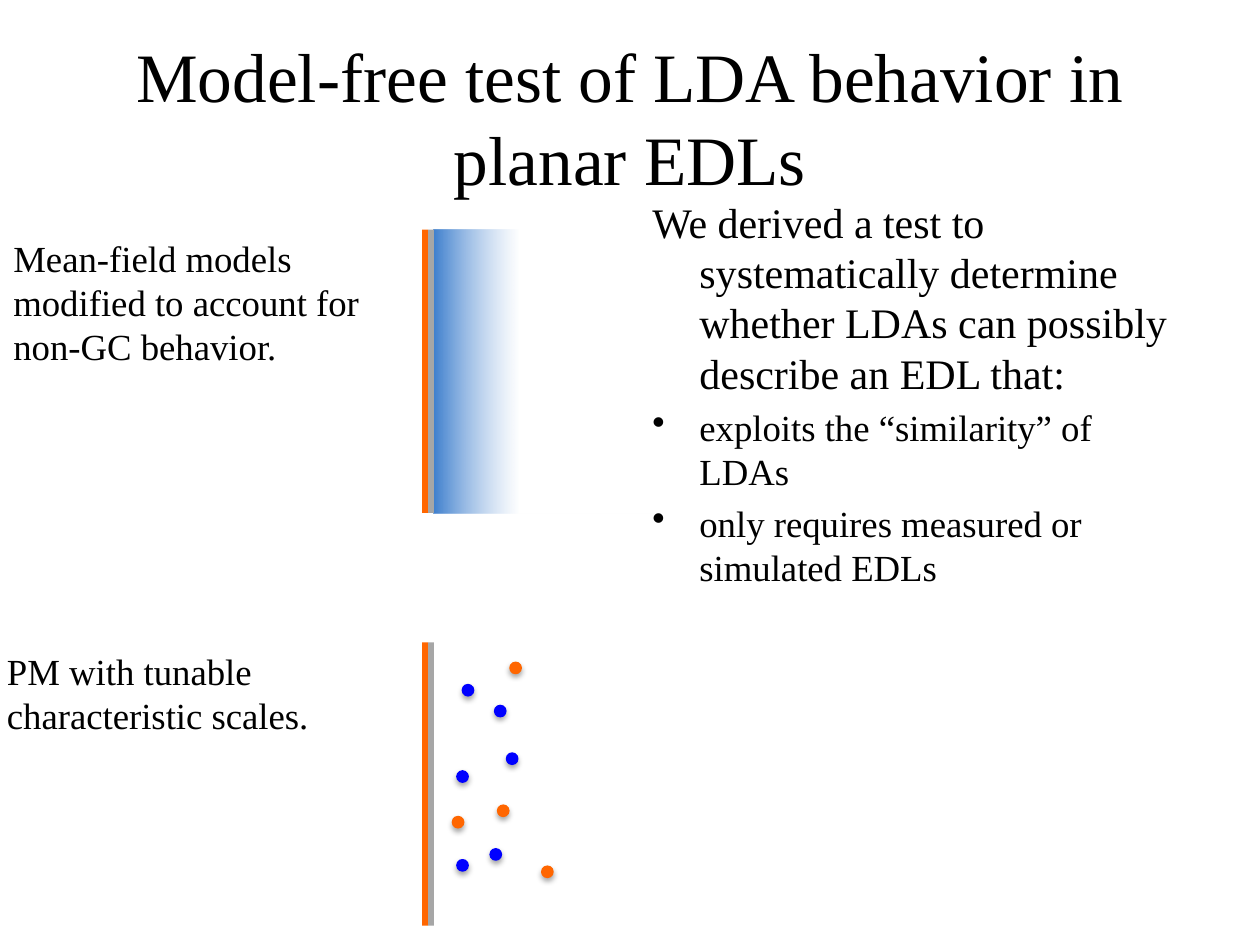
import pptx
import pptx.dml.color
import pptx.enum.shapes
import pptx.enum.text
import pptx.oxml
import pptx.oxml.ns
import pptx.util
from lxml import etree

Cm = pptx.util.Cm
Pt = pptx.util.Pt
RGBColor = pptx.dml.color.RGBColor
ShapeType = pptx.enum.shapes.MSO_SHAPE
Align = pptx.enum.text.PP_ALIGN
Anchor = pptx.enum.text.MSO_ANCHOR
qn = pptx.oxml.ns.qn

BLACK = RGBColor(0x00, 0x00, 0x00)
ORANGE = RGBColor(0xFF, 0x66, 0x00)
BLUE = RGBColor(0x00, 0x00, 0xFF)
GRAY = RGBColor(0xA6, 0xA6, 0xA6)
PALE_BLUE = RGBColor(0x8E, 0xB4, 0xE3)
DEEP_BLUE = RGBColor(0x3F, 0x80, 0xCE)
FONT = "Times New Roman"

# Paragraphs are (text, size, bullet); a bullet of None means no list layout,
# an empty one a hanging indent without a mark.
TEXTS = [
    {"area": (1.27, 0.76, 22.86, 3.18), "align": Align.CENTER, "anchor": Anchor.MIDDLE,
     "paragraphs": [("Model-free test of LDA behavior in planar EDLs", 39.6, None)]},
    {"area": (0.02, 4.62, 8.1, 2.95), "align": Align.LEFT, "anchor": Anchor.TOP,
     "paragraphs": [("Mean-field models modified to account for non-GC behavior.", 21, None)]},
    {"area": (-0.11, 12.95, 8.64, 2.06), "align": Align.LEFT, "anchor": Anchor.TOP,
     "paragraphs": [("PM with tunable characteristic scales.", 21, None)]},
    {"area": (12.9, 3.83, 11.23, 13.39), "align": Align.LEFT, "anchor": Anchor.TOP,
     "paragraphs": [
         ("We derived a test to systematically determine whether LDAs can "
          "possibly describe an EDL that:", 24, ""),
         ("exploits the “similarity” of LDAs", 21, "•"),
         ("only requires measured or simulated EDLs", 21, "•")]},
]
HANGING = Cm(0.95)

WALL_TOPS = (4.63, 12.95)
WALL_LEFT, LAYER_WIDTH, WALL_HEIGHT = 8.51, 0.12, 5.71
CLOUD_AREA = (8.74, 4.62, 4.55, 5.73)

ION_SIZE = 0.23
IONS = {
    ORANGE: [(10.03, 16.23), (10.28, 13.35), (10.92, 17.46), (9.12, 16.46)],
    BLUE: [(9.21, 17.33), (9.21, 15.54), (9.88, 17.11), (9.32, 13.8),
           (9.97, 14.22), (10.21, 15.18)],
}
ION_SHADOW = (
    '<a:effectLst xmlns:a="http://schemas.openxmlformats.org/drawingml/2006/main">'
    '<a:outerShdw blurRad="39370" dist="22860" dir="5400000" rotWithShape="0">'
    '<a:srgbClr val="000000"><a:alpha val="35000"/></a:srgbClr>'
    '</a:outerShdw></a:effectLst>')


def add_text(page, area, align, anchor, paragraphs):
    box = page.shapes.add_textbox(*map(Cm, area))
    frame = box.text_frame
    frame.word_wrap = True
    frame.vertical_anchor = anchor
    for index, (text, size, bullet) in enumerate(paragraphs):
        para = frame.add_paragraph() if index else frame.paragraphs[0]
        para.alignment = align
        if index:
            para.space_before = Pt(size * 0.2)
        if bullet is not None:
            properties = para._p.get_or_add_pPr()
            properties.set("marL", str(HANGING))
            properties.set("indent", str(-HANGING))
            if bullet:
                etree.SubElement(properties, qn("a:buChar")).set("char", bullet)
        span = para.add_run()
        span.text = text
        for name, value in {"name": FONT, "size": Pt(size)}.items():
            setattr(span.font, name, value)
        span.font.color.rgb = BLACK


def add_plain_shape(page, kind, area, color):
    """Add a shape with a solid fill, no outline and no shadow."""
    shape = page.shapes.add_shape(kind, *map(Cm, area))
    shape.shadow.inherit = False
    shape.fill.solid()
    shape.fill.fore_color.rgb = color
    shape.line.fill.background()
    return shape


def add_cloud(page):
    """Add the diffuse layer, which fades out to the right."""
    cloud = add_plain_shape(page, ShapeType.RECTANGLE, CLOUD_AREA, DEEP_BLUE)
    cloud.fill.gradient()
    cloud.fill.gradient_angle = 180
    for stop, position, color in zip(cloud.fill.gradient_stops, (0.62, 1), (PALE_BLUE, DEEP_BLUE)):
        stop.position = position
        stop.color.rgb = color
    clear_color = next(cloud._element.spPr.iter(qn("a:srgbClr")))
    etree.SubElement(clear_color, qn("a:alpha")).set("val", "0")


def add_wall(page, top):
    for layer, color in enumerate((ORANGE, GRAY)):
        area = (WALL_LEFT + layer * LAYER_WIDTH, top, LAYER_WIDTH, WALL_HEIGHT)
        add_plain_shape(page, ShapeType.RECTANGLE, area, color)


def add_ion(page, left, top, color):
    ion = add_plain_shape(page, ShapeType.OVAL, (left, top, ION_SIZE, ION_SIZE), color)
    ion.line.color.rgb = color
    ion.line.width = Pt(0.75)
    properties = ion._element.spPr
    properties.replace(properties.find(qn("a:effectLst")), pptx.oxml.parse_xml(ION_SHADOW))


def main():
    deck = pptx.Presentation()
    deck.slide_width, deck.slide_height = Cm(25.4), Cm(19.05)
    page = deck.slides.add_slide(deck.slide_layouts[6])
    for text in TEXTS:
        add_text(page, **text)
    add_cloud(page)
    for top in WALL_TOPS:
        add_wall(page, top)
    for color, places in IONS.items():
        for left, top in places:
            add_ion(page, left, top, color)
    deck.save("out.pptx")


if __name__ == "__main__":
    main()
